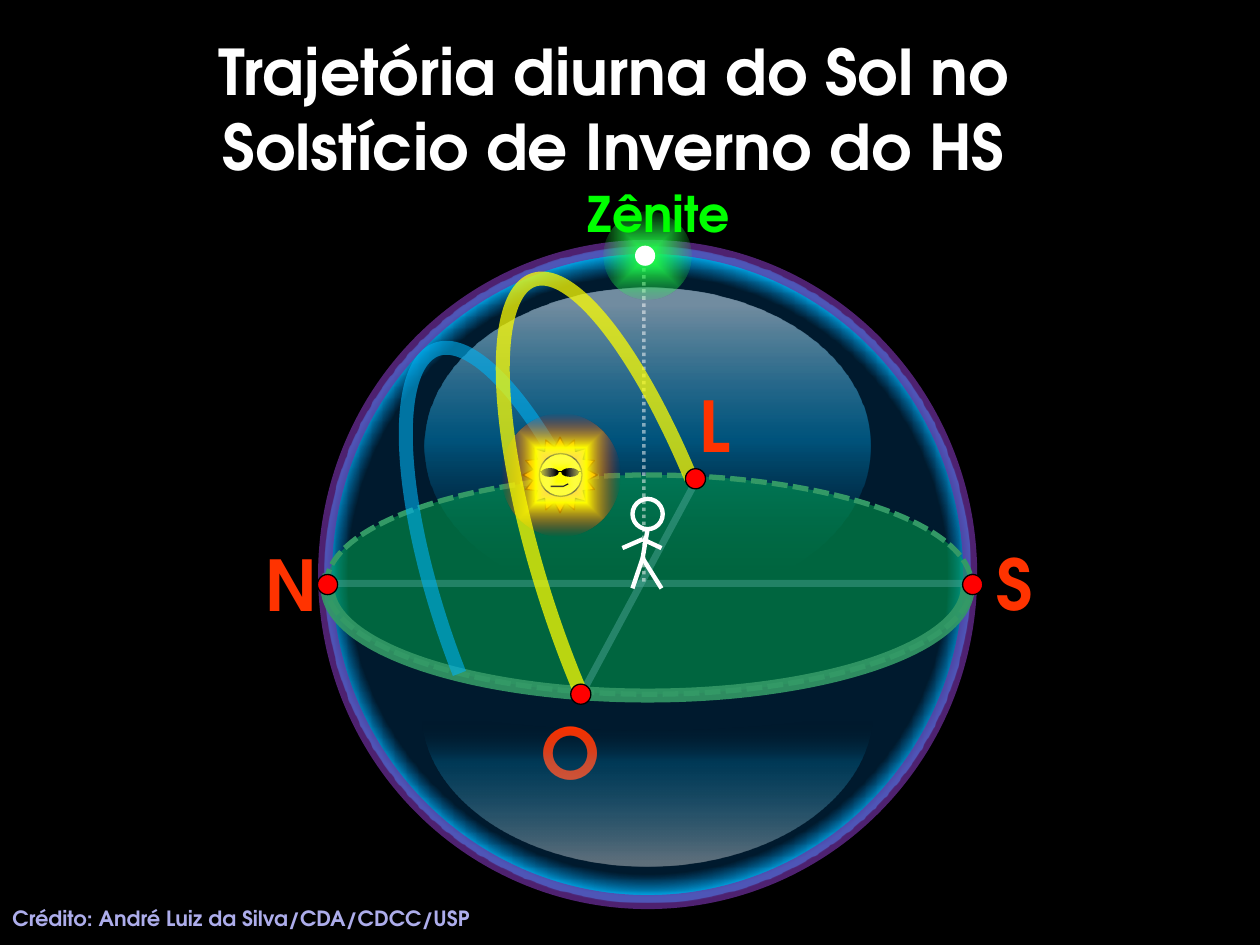
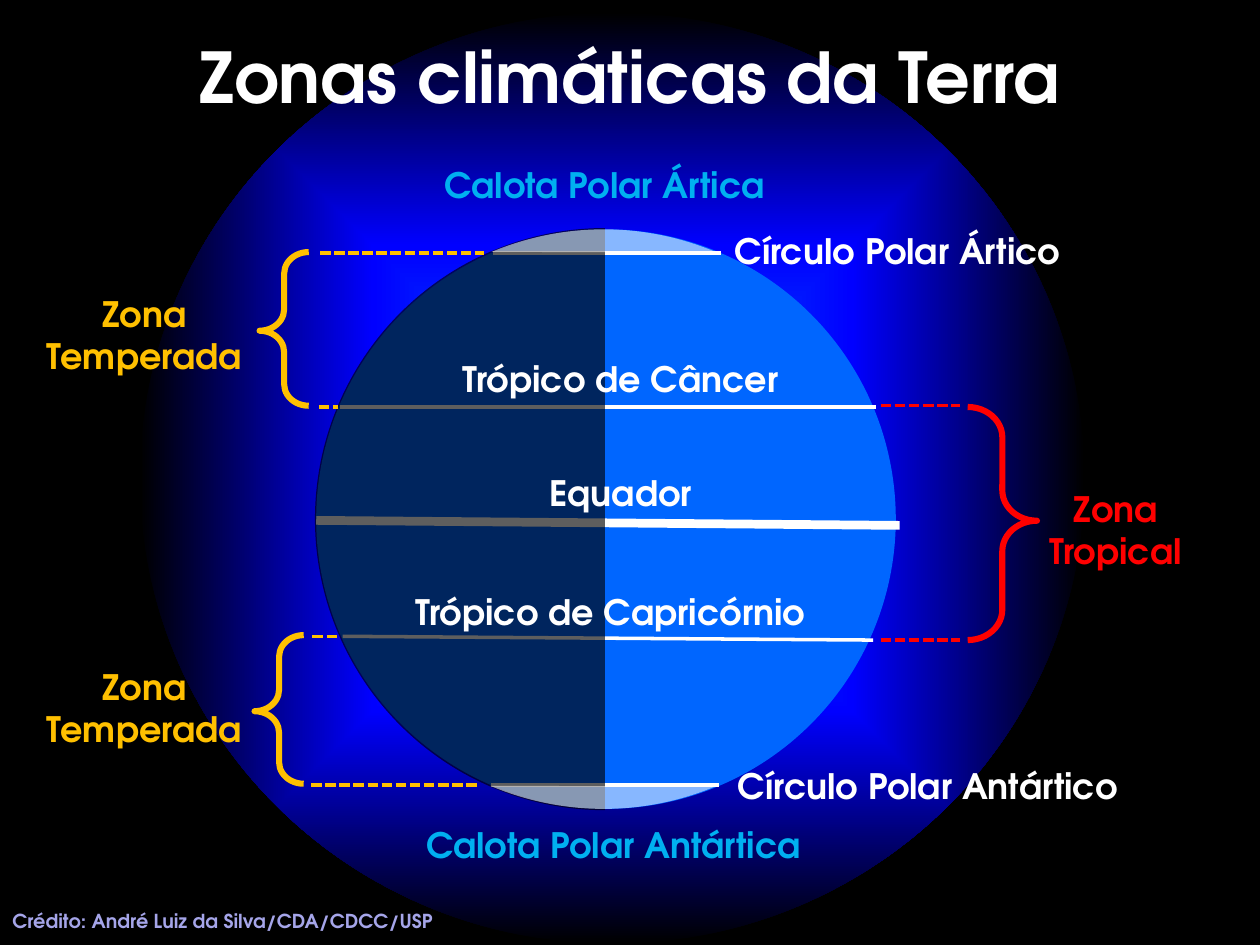
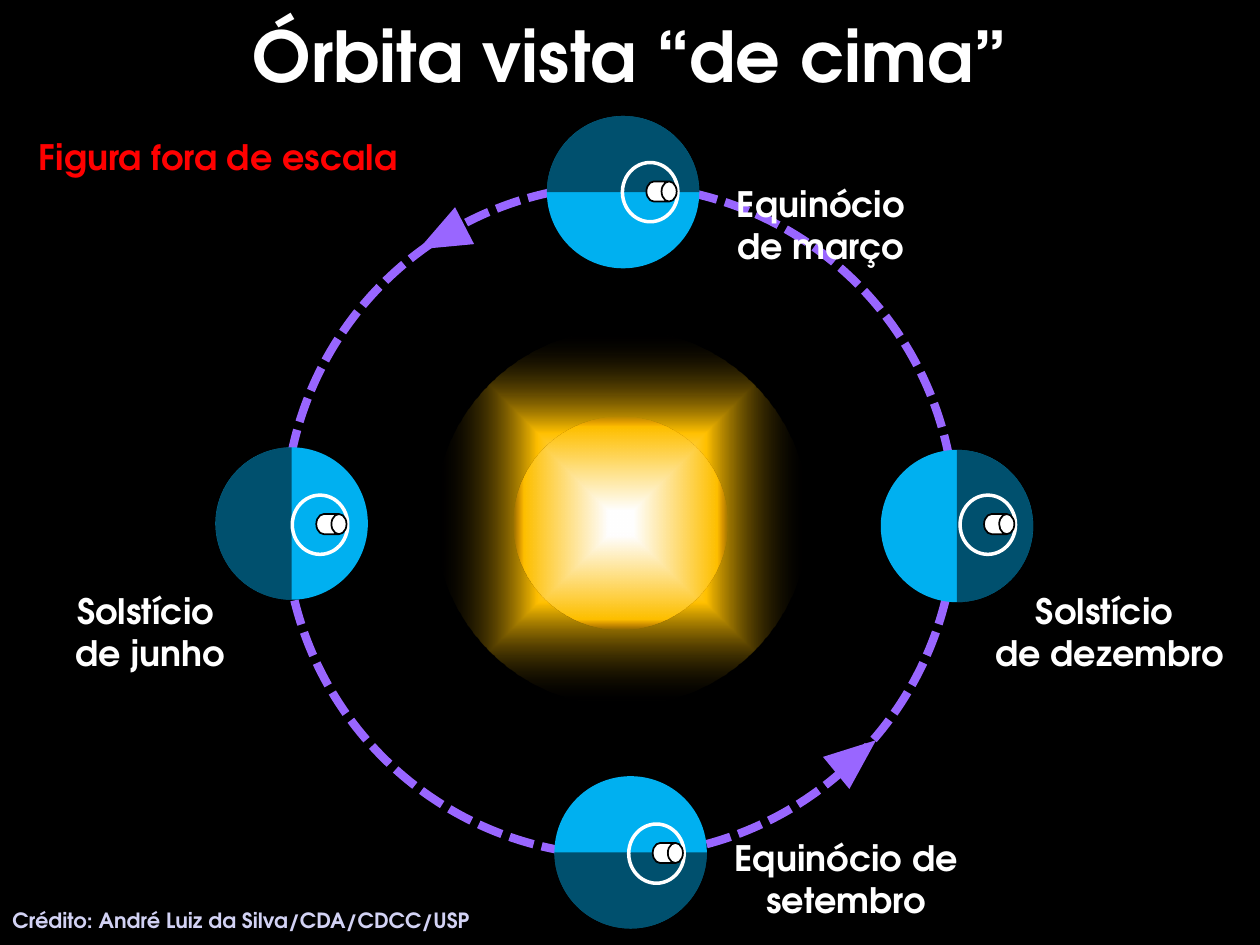
from pptx import Presentation
from pptx.dml.color import RGBColor
from pptx.enum.dml import MSO_LINE as DASH
from pptx.enum.shapes import MSO_CONNECTOR, MSO_SHAPE as SHAPE
from pptx.enum.text import MSO_ANCHOR, MSO_AUTO_SIZE, PP_ALIGN as ALIGN
from pptx.oxml import parse_xml
from pptx.oxml.ns import nsdecls, qn
from pptx.util import Inches, Pt
from lxml.etree import SubElement

FONT = "TeX Gyre Adventor"
CREDIT = "Crédito: André Luiz da Silva/CDA/CDCC/USP"
COLORS = {
    "black": "000000", "white": "FFFFFF", "red": "FF0000", "yellow": "FFFF00",
    "amber": "FFC000", "orange": "EE8800", "compass": "FF3300",
    "lime": "00FF00", "glow": "21FF46", "ground": "00B050", "horizon": "339966",
    "sky": "00B0F0", "deep sky": "0070C0", "earth": "0066FF", "blue": "0000FF",
    "purple": "7030A0", "violet": "9966FF",
    "lilac": "A5A5E9", "credit 1": "ADADEB", "credit 3": "D2D2F4",
}


def write(slide, text, left, top, width, height, box=None, size=20,
          color="white", align=ALIGN.CENTER, anchor=MSO_ANCHOR.TOP):
    """Put bold text in a new text box, or in the given placeholder."""
    place = [Inches(value) for value in (left, top, width, height)]
    if box is None:
        box = slide.shapes.add_textbox(*place)
    box.left, box.top, box.width, box.height = place
    frame = box.text_frame
    frame.text = text
    frame.word_wrap = True
    frame.auto_size = MSO_AUTO_SIZE.NONE
    frame.vertical_anchor = anchor
    for para in frame.paragraphs:
        para.alignment = align
        for span in para.runs:
            span.font.name = FONT
            span.font.size = Pt(size)
            span.font.bold = True
            span.font.color.rgb = RGBColor.from_string(COLORS[color])


def draw(slide, kind, a, b, c, d, fill=None, alpha=100, stops=None, path=None,
         line=None, dash=None, line_alpha=100, turn=0, adjust=()):
    """Draw a preset at left, top, width, height, or a line from a, b to c, d.

    line is (color, points); stops are (percent, color, opacity) of a gradient,
    which runs downwards unless path names its form.
    """
    place = [Inches(value) for value in (a, b, c, d)]
    if kind == "line":
        shape = slide.shapes.add_connector(MSO_CONNECTOR.STRAIGHT, *place)
    else:
        shape = slide.shapes.add_shape(kind, *place)
        shape.shadow.inherit = False
        shape.rotation = turn
        for index, value in enumerate(adjust):
            shape.adjustments[index] = value
        if fill:
            shape.fill.solid()
            shape.fill.fore_color.rgb = RGBColor.from_string(COLORS[fill])
        else:
            shape.fill.background()
    properties = shape._element.spPr
    if stops:
        marks = "".join(
            f'<a:gs pos="{percent * 1000}"><a:srgbClr val="{COLORS[color]}">'
            f'<a:alpha val="{opacity * 1000}"/></a:srgbClr></a:gs>'
            for percent, color, opacity in stops)
        form = '<a:lin ang="5400000" scaled="0"/>'
        if path:
            form = (f'<a:path path="{path}"><a:fillToRect l="50000" t="50000" '
                    'r="50000" b="50000"/></a:path>')
        gradient = parse_xml(f'<a:gradFill {nsdecls("a")} rotWithShape="1">'
                             f'<a:gsLst>{marks}</a:gsLst>{form}</a:gradFill>')
        properties.replace(properties.find(qn("a:noFill")), gradient)
    if line:
        shape.line.color.rgb = RGBColor.from_string(COLORS[line[0]])
        shape.line.width = Pt(line[1])
        shape.line.dash_style = dash
    else:
        shape.line.fill.background()
    for query, opacity in (("a:solidFill/a:srgbClr", alpha),
                           ("a:ln/a:solidFill/a:srgbClr", line_alpha)):
        if opacity < 100:
            for node in properties.xpath(query):
                SubElement(node, qn("a:alpha")).set("val", str(opacity * 1000))
    if kind == "line":
        SubElement(properties, qn("a:effectLst"))


deck = Presentation()
deck.slide_width, deck.slide_height = Inches(10), Inches(7.5)
backdrop = deck.slide_master.background.fill
backdrop.solid()
backdrop.fore_color.rgb = RGBColor.from_string(COLORS["black"])
title_only = deck.slide_layouts[5]
sun_path, climate, orbit = [deck.slides.add_slide(title_only) for _ in range(3)]

# Slide 1: celestial sphere
draw(sun_path, SHAPE.OVAL, 3.37, 2.28, 3.54, 2.52,
     stops=[(6, "white", 58), (48, "sky", 42), (91, "black", 10)])
draw(sun_path, SHAPE.OVAL, 2.58, 1.96, 5.12, 5.2, path="circle",
     stops=[(65, "deep sky", 24), (70, "sky", 100)],
     line=("purple", 8), line_alpha=70)

# Horizon with its compass points
draw(sun_path, "line", 4.61, 5.52, 5.55, 3.77, line=("lilac", 4), line_alpha=45)
for letter, left, top in (("O", 4.2, 5.58), ("N", 2.01, 4.25),
                          ("L", 5.45, 2.99), ("S", 7.81, 4.24)):
    write(sun_path, letter, left, top, 0.39, 0.77, size=40, color="compass",
          align=ALIGN.LEFT)
draw(sun_path, "line", 2.63, 4.63, 7.75, 4.63, line=("lilac", 4), line_alpha=42)
draw(sun_path, SHAPE.OVAL, 2.59, 3.77, 5.12, 1.74, fill="ground", alpha=50,
     line=("horizon", 3), dash=DASH.SQUARE_DOT)
draw(sun_path, SHAPE.ARC, 2.6, 3.8, 5.08, 1.72, adjust=(0, 109.3),
     line=("horizon", 8), line_alpha=90)

# Observer
draw(sun_path, SHAPE.OVAL, 5.02, 3.96, 0.24, 0.24, line=("white", 2.5))
for limb in ((5.14, 4.2, 5.1, 4.43), (5.1, 4.43, 5.25, 4.67),
             (5.1, 4.43, 5.02, 4.67), (5.1, 4.28, 5.25, 4.35),
             (4.94, 4.35, 5.1, 4.28)):
    draw(sun_path, "line", *limb, line=("white", 2.5))

# North and south points, lower reflection, vertical and winter path
for left in (2.52, 7.64):
    draw(sun_path, SHAPE.OVAL, left, 4.56, 0.16, 0.16, fill="red",
         line=("black", 0.75))
draw(sun_path, SHAPE.MOON, 4.52, 4.47, 1.23, 3.58, turn=270, adjust=[0.875])
moon = sun_path.shapes[-1]
moon.fill.gradient()
moon.fill.gradient_angle = 0
stop_list = moon._element.spPr.find(qn("a:gradFill")).find(qn("a:gsLst"))
for node in list(stop_list):
    stop_list.remove(node)
for percent, color, opacity in ((3, "white", 37), (68, "sky", 20), (94, "black", 0)):
    mark = SubElement(stop_list, qn("a:gs"))
    mark.set("pos", str(percent * 1000))
    tint = SubElement(mark, qn("a:srgbClr"))
    tint.set("val", COLORS[color])
    SubElement(tint, qn("a:alpha")).set("val", str(opacity * 1000))
draw(sun_path, "line", 5.11, 1.96, 5.11, 4.64, line=("white", 2),
     dash=DASH.ROUND_DOT, line_alpha=50)
draw(sun_path, SHAPE.ARC, 3.53, 2.64, 1.4, 4.54, turn=160.3,
     adjust=(205.83, 74.18), line=("sky", 8), line_alpha=60)

# Sun with dark glasses
thin = ("black", 0.75)
draw(sun_path, SHAPE.STAR_16_POINT, 4.15, 3.47, 0.59, 0.6, fill="amber",
     line=thin, adjust=[0.375])
draw(sun_path, SHAPE.OVAL, 4.28, 3.6, 0.34, 0.34, fill="yellow", line=thin)
pen = sun_path.shapes.build_freeform(Inches(4.37), Inches(3.86))
pen.add_line_segments([(Inches(x), Inches(y)) for x, y in
                       ((4.42, 3.86), (4.47, 3.86), (4.51, 3.84))], close=False)
mouth = pen.convert_to_shape()
mouth.shadow.inherit = False
mouth.fill.background()
mouth.line.color.rgb = RGBColor.from_string(COLORS["black"])
mouth.line.width = Pt(0.75)
for left in (4.3, 4.46):
    draw(sun_path, SHAPE.OVAL, left, 3.72, 0.13, 0.06, fill="black", line=thin)
draw(sun_path, "line", 4.28, 3.74, 4.62, 3.74, line=thin)
draw(sun_path, SHAPE.OVAL, 3.98, 3.28, 0.94, 0.98, path="shape",
     stops=[(7, "white", 0), (42, "yellow", 100), (100, "red", 0)])

# Equinox path, east and west points, zenith
draw(sun_path, SHAPE.ARC, 4.33, 2.09, 1.42, 5.08, turn=161.5,
     adjust=(189.76, 82.06), line=("yellow", 8), line_alpha=72)
for left, top in ((5.44, 3.72), (4.53, 5.43)):
    draw(sun_path, SHAPE.OVAL, left, top, 0.16, 0.16, fill="red", line=thin)
draw(sun_path, SHAPE.OVAL, 4.79, 1.68, 0.7, 0.7, turn=305.7, path="shape",
     stops=[(7, "glow", 100), (77, "glow", 2)])
draw(sun_path, SHAPE.OVAL, 5.04, 1.95, 0.16, 0.16, fill="white")
write(sun_path, "Zênite", 4.37, 1.41, 1.72, 0.57, size=28, color="lime")

# Slide 2: Earth, its parallels and its night side
draw(climate, SHAPE.OVAL, 1.11, 0.1, 7.5, 7.39, path="shape",
     stops=[(0, "earth", 100), (50, "blue", 100), (100, "black", 100)])
draw(climate, SHAPE.OVAL, 2.51, 1.82, 4.6, 4.6, fill="earth")
for *ends, weight in ((2.51, 4.13, 7.14, 4.17, 5), (2.7, 3.23, 6.95, 3.23, 2),
                      (2.72, 5.05, 6.93, 5.08, 2), (3.91, 2.01, 5.72, 2.01, 2),
                      (3.9, 6.23, 5.71, 6.23, 2)):
    draw(climate, "line", *ends, line=("white", weight))
draw(climate, SHAPE.CHORD, 2.5, 1.81, 4.6, 4.62, fill="black", alpha=63,
     adjust=(54, 162))
for turn in (0, 180):
    draw(climate, SHAPE.CHORD, 2.49, 1.82, 4.6, 4.6, fill="white", alpha=53,
         turn=turn, adjust=(40.35, 67.78))

# Names of the parallels and of the polar caps
for name, left, top, width, color in (
        ("Trópico de Câncer", 2.64, 2.79, 4.57, "white"),
        ("Trópico de Capricórnio", 2.56, 4.64, 4.57, "white"),
        ("Equador", 2.64, 3.69, 4.57, "white"),
        ("Círculo Polar Ártico", 4.84, 1.77, 4.57, "white"),
        ("Círculo Polar Antártico", 5.08, 6.02, 4.57, "white"),
        ("Calota Polar Antártica", 3.1, 6.49, 3.54, "sky"),
        ("Calota Polar Ártica", 3.03, 1.25, 3.54, "sky")):
    write(climate, name, left, top, width, 0.44, color=color)

# Zones: brace, label and dashed leaders
for brace, turn, color, name, left, top in (
        ((7.68, 3.23, 0.55, 1.85), 0, "red", "Zona Tropical", 7.91, 3.82),
        ((2.06, 2, 0.39, 1.22), 180, "amber", "Zona Temperada", 0.2, 2.27),
        ((2.02, 5.04, 0.39, 1.18), 180, "amber", "Zona Temperada", 0.2, 5.23)):
    draw(climate, SHAPE.RIGHT_BRACE, *brace, turn=turn, line=(color, 3.5),
         adjust=(0.438, 0.488))
    write(climate, name, left, top, 1.89, 0.77, color=color)
for start, end, height, color in (
        (2.54, 3.84, 2.01, "amber"), (2.47, 3.81, 6.23, "amber"),
        (2.53, 2.68, 3.23, "amber"), (2.48, 2.68, 5.05, "amber"),
        (6.99, 7.62, 5.08, "red"), (6.99, 7.62, 3.22, "red")):
    draw(climate, "line", start, height, end, height, line=(color, 2),
         dash=DASH.SQUARE_DOT)

# Slide 3: orbit with its direction
draw(orbit, SHAPE.OVAL, 2.26, 1.47, 5.32, 5.32, line=("violet", 4.75),
     dash=DASH.SQUARE_DOT)
for left, top, turn in ((3.34, 1.68, 242.7), (6.63, 5.8, 50.6)):
    draw(orbit, SHAPE.ISOSCELES_TRIANGLE, left, top, 0.33, 0.41, fill="violet",
         turn=turn)
for name, left, top, width in (
        ("Solstício \nde junho", 0.31, 4.63, 1.77),
        ("Solstício \nde dezembro", 7.76, 4.63, 2.09),
        ("Equinócio de março", 5.63, 1.4, 1.77),
        ("Equinócio de setembro", 5.67, 6.59, 2.09)):
    write(orbit, name, left, top, width, 0.77)
write(orbit, "Figura fora de escala", 0.21, 1.03, 3.54, 0.44, color="red",
      align=ALIGN.LEFT)

# Earth at each season: night half, polar circle and tilted axis
for left, top, night_turn, ring_left, ring_top in (
        (1.71, 3.55, 180, 2.32, 3.93), (6.99, 3.57, 0, 7.62, 3.93),
        (4.4, 6.16, 90, 4.99, 6.54), (4.34, 0.92, 270, 4.94, 1.29)):
    draw(orbit, SHAPE.OVAL, left, top, 1.21, 1.21, fill="sky")
    draw(orbit, SHAPE.CHORD, left, top, 1.21, 1.21, fill="black", alpha=54,
         turn=night_turn, adjust=(162, 54))
    draw(orbit, SHAPE.OVAL, ring_left, ring_top, 0.44, 0.47, line=("white", 2))
    draw(orbit, SHAPE.CAN, ring_left + 0.23, ring_top + 0.11, 0.16, 0.24,
         fill="white", line=("black", 1), turn=90, adjust=[0.752])

# Sun and its halo
draw(orbit, SHAPE.OVAL, 3.45, 2.62, 2.97, 2.98, path="shape",
     stops=[(7, "white", 100), (45, "amber", 100), (100, "black", 0)])
draw(orbit, SHAPE.OVAL, 4.08, 3.31, 1.69, 1.69, path="shape",
     stops=[(12, "white", 100), (90, "amber", 100), (100, "orange", 0)])

# Titles and credits, in front of everything else
for slide, title, title_place, title_size, credit_place, credit_size, color in (
        (sun_path, "Trajetória diurna do Sol no Solstício de Inverno do HS",
         (0.62, 0.23, 8.5, 1.25), 36, (0, 7.14, 10.28, 0.3), 12, "credit 1"),
        (climate, "Zonas climáticas da Terra",
         (0.43, 0.05, 9.13, 1.1), 40, (0, 7.17, 10.28, 0.29), 11, "lilac"),
        (orbit, "Órbita vista “de cima”",
         (0.75, 0.06, 8.5, 0.75), 40, (0, 7.15, 10, 0.3), 12, "credit 3")):
    heading = slide.shapes.title
    write(slide, title, *title_place, box=heading, size=title_size,
          anchor=MSO_ANCHOR.MIDDLE)
    heading._element.getparent().append(heading._element)
    write(slide, CREDIT, *credit_place, size=credit_size, color=color,
          align=ALIGN.LEFT)

deck.save("out.pptx")
